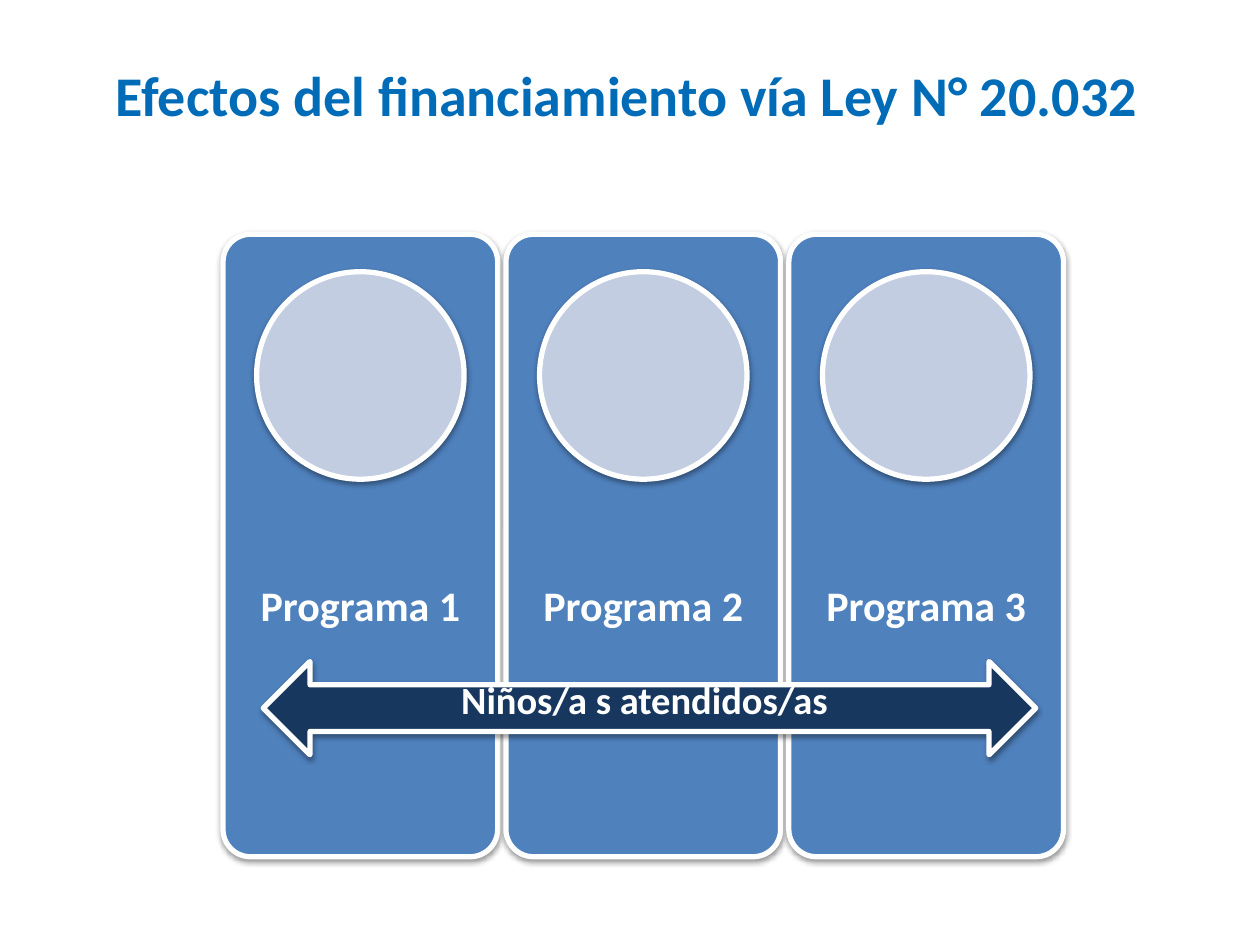
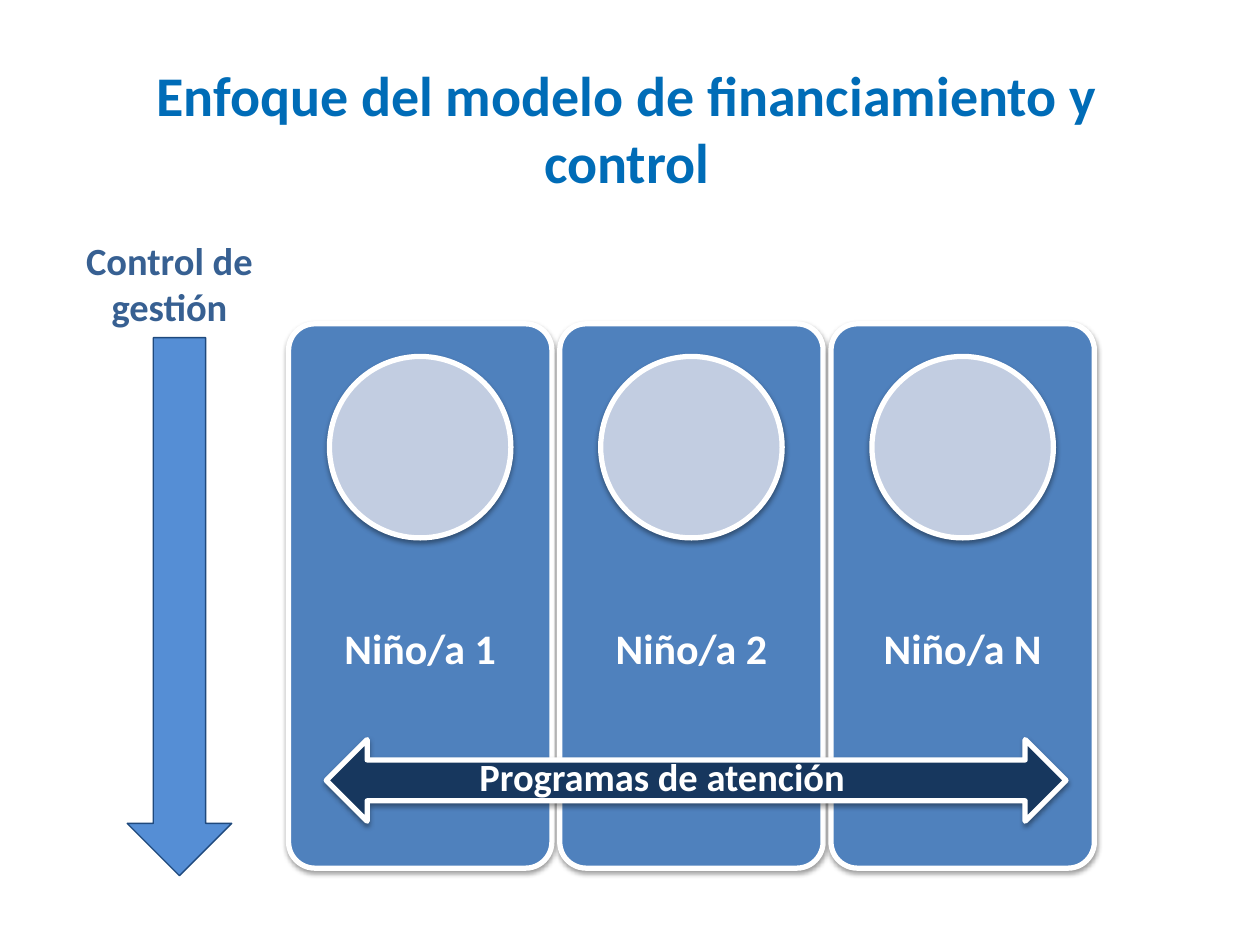
"""Build two slides that contrast programme funding with child-centred funding."""
from lxml import etree
from pptx import Presentation
from pptx import util as u
from pptx.dml.color import RGBColor
from pptx.enum import shapes, text
from pptx.oxml.ns import qn

COLORS = {
    "title": "006CB7",
    "card": "4F81BD",
    "circle": "C2CDE1",
    "band": "17375E",
    "control": "558ED5",
    "control_line": "1F497D",
    "control_text": "376092",
    "white": "FFFFFF",
    "shadow": "000000",
}
SHAPE = shapes.MSO_SHAPE
ANCHOR = text.MSO_ANCHOR


def write(sp, words, size=22, color="white", anchor=ANCHOR.TOP, inset=None, spacing=None):
    tf = sp.text_frame
    tf.word_wrap = True
    tf.auto_size = text.MSO_AUTO_SIZE.NONE
    tf.vertical_anchor = anchor
    if inset is not None:
        tf.margin_left = tf.margin_right = tf.margin_top = tf.margin_bottom = u.Inches(inset)
    p = tf.paragraphs[0]
    p.alignment = text.PP_ALIGN.CENTER
    if spacing:
        p.line_spacing = spacing
    r = p.add_run()
    r.text = words
    r.font.name = "Calibri"
    r.font.size = u.Pt(size)
    r.font.bold = True
    r.font.color.rgb = RGBColor.from_string(COLORS[color])


def draw(s, kind, box, fill, line="white", width=3, shadow=True):
    sp = s.shapes.add_shape(kind, *map(u.Inches, box))
    sp.fill.solid()
    sp.fill.fore_color.rgb = RGBColor.from_string(COLORS[fill])
    sp.line.color.rgb = RGBColor.from_string(COLORS[line])
    sp.line.width = u.Pt(width)
    sp.shadow.inherit = False
    if shadow:
        effects = sp.element.spPr.find(qn("a:effectLst"))
        outer = etree.SubElement(effects, qn("a:outerShdw"), blurRad=str(u.Pt(3.1)),
                                 dist=str(u.Pt(1.6)), dir="5400000", rotWithShape="0")
        clr = etree.SubElement(outer, qn("a:srgbClr"), val=COLORS["shadow"])
        etree.SubElement(clr, qn("a:alpha"), val="38000")
    return sp


prs = Presentation()
prs.slide_width, prs.slide_height = u.Inches(10), u.Inches(7.5)

SLIDES = [
    dict(title="Efectos del financiamiento vía Ley N° 20.032",
         cards=["Programa 1", "Programa 2", "Programa 3"],
         left=1.77, top=1.86, width=2.18, height=4.94,
         arrow=(2.09, 5.25, 6.13), band="Niños/a s atendidos/as", band_at=(1.77, 5.32)),
    dict(title="Enfoque del modelo de financiamiento y control",
         cards=["Niño/a 1", "Niño/a 2", "Niño/a N"],
         left=2.29, top=2.57, width=2.09, height=4.32,
         arrow=(2.59, 5.87, 5.87), band="Programas de atención", band_at=(1.91, 5.93)),
]

for d in SLIDES:
    s = prs.slides.add_slide(prs.slide_layouts[5])
    title = s.shapes.title
    title.left, title.top, title.width, title.height = map(u.Inches, (0.51, 0.43, 8.93, 0.95))
    write(title, d["title"], size=32, color="title")

    top, width, height = d["top"], d["width"], d["height"]
    diameter = height / 3
    for i, name in enumerate(d["cards"]):
        left = d["left"] + i * width * 1.03
        card = draw(s, SHAPE.ROUNDED_RECTANGLE, (left, top, width, height), "card")
        card.adjustments[0] = 0.1
        label = s.shapes.add_textbox(*map(u.Inches, (left, top + 0.4 * height, width, 0.4 * height)))
        write(label, name, size=24, anchor=ANCHOR.MIDDLE, inset=0.19, spacing=0.9)
        draw(s, SHAPE.OVAL, (left + (width - diameter) / 2, top + 0.06 * height,
                             diameter, diameter), "circle")

    draw(s, SHAPE.LEFT_RIGHT_ARROW, (*d["arrow"], 0.15 * height), "band")
    band = s.shapes.add_textbox(*map(u.Inches, (*d["band_at"], 6.69, 0.47)))
    write(band, d["band"])

draw(s, SHAPE.DOWN_ARROW, (1.01, 2.68, 0.83, 4.27), "control",
     line="control_line", width=0.75, shadow=False)
control = s.shapes.add_textbox(*map(u.Inches, (0.43, 1.83, 1.83, 0.84)))
write(control, "Control de gestión", color="control_text")

prs.save("out.pptx")
